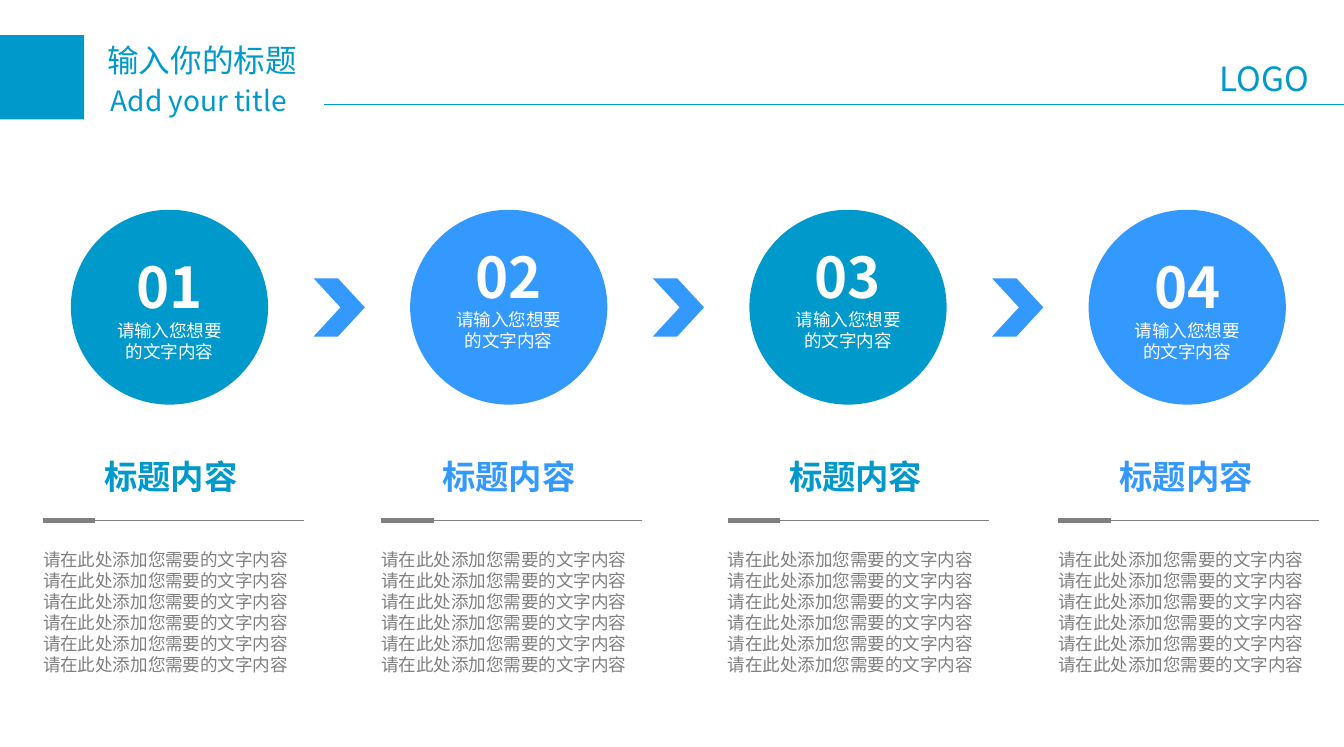
from dataclasses import dataclass

from lxml import etree
from pptx import Presentation
from pptx import util as u
from pptx.dml.color import RGBColor
from pptx.enum import shapes, text
from pptx.oxml import ns


@dataclass(frozen=True)
class Theme:
    teal: str = "0099CC"
    blue: str = "3399FF"
    grey: str = "808080"
    white: str = "FFFFFF"
    font: str = "Noto Sans CJK SC"
    body_font: str = "Arial"
    number: int = 32
    heading: int = 19
    title: int = 18
    subtitle: int = 16
    body: int = 10


class Deck:
    def __init__(self, theme, width, height):
        self.theme = theme
        self.prs = Presentation()
        self.prs.slide_width = u.Pt(width)
        self.prs.slide_height = u.Pt(height)
        self.s = self.prs.slides.add_slide(self.prs.slide_layouts[6])

    def shape(self, kind, x, y, w, h, color):
        sp = self.s.shapes.add_shape(kind, u.Pt(x), u.Pt(y), u.Pt(w), u.Pt(h))
        sp.shadow.inherit = False
        sp.fill.solid()
        sp.fill.fore_color.rgb = RGBColor.from_string(color)
        sp.line.fill.background()
        return sp

    def line(self, x1, x2, y, color, weight):
        ln = self.s.shapes.add_connector(
            shapes.MSO_CONNECTOR.STRAIGHT, u.Pt(x1), u.Pt(y), u.Pt(x2), u.Pt(y))
        ln.line.color.rgb = RGBColor.from_string(color)
        ln.line.width = u.Pt(weight)
        etree.SubElement(ln._element.spPr, ns.qn("a:effectLst"))

    def run(self, p, words, size, color, bold=False, font=None):
        r = p.add_run()
        r.text = words
        r.font.size = u.Pt(size)
        r.font.bold = bold
        r.font.name = font or self.theme.font
        r.font.color.rgb = RGBColor.from_string(color)
        ea = etree.SubElement(r._r.get_or_add_rPr(), ns.qn("a:ea"))
        ea.set("typeface", font or self.theme.font)

    def insets(self, tf, left, top, right, bottom):
        tf.margin_left, tf.margin_top = u.Pt(left), u.Pt(top)
        tf.margin_right, tf.margin_bottom = u.Pt(right), u.Pt(bottom)

    def label(self, x, y, w, h, lines, size, color, bold=False, font=None,
              align=text.PP_ALIGN.LEFT, wrap=True, inset=True):
        tf = self.s.shapes.add_textbox(u.Pt(x), u.Pt(y), u.Pt(w), u.Pt(h)).text_frame
        tf.word_wrap = wrap
        tf.auto_size = text.MSO_AUTO_SIZE.SHAPE_TO_FIT_TEXT
        if not inset:
            self.insets(tf, 0, 0, 0, 0)
        for i, words in enumerate(lines):
            p = tf.add_paragraph() if i else tf.paragraphs[0]
            p.alignment = align
            self.run(p, words, size, color, bold, font)

    def circle(self, x, y, w, h, color, number, caption, lift):
        t = self.theme
        sp = self.shape(shapes.MSO_SHAPE.OVAL, x, y, w, h, color)
        tf = sp.text_frame
        tf.word_wrap = True
        tf.vertical_anchor = text.MSO_ANCHOR.MIDDLE
        self.insets(tf, 6, 3, 6, 3 + lift)
        p = tf.paragraphs[0]
        p.alignment = text.PP_ALIGN.CENTER
        self.run(p, number, t.number, t.white, True)
        p = tf.add_paragraph()
        p.alignment = text.PP_ALIGN.CENTER
        self.run(p, caption, t.body, t.white)

    def chevron(self, x, y, w, h, color):
        sp = self.shape(shapes.MSO_SHAPE.CHEVRON, x, y, w, h, color)
        sp.adjustments[0] = 0.525


def header(deck):
    t = deck.theme
    deck.shape(shapes.MSO_SHAPE.RECTANGLE, 0, 20, 48, 48, t.teal)
    deck.label(54, 20, 124.5, 29, ["输入你的标题"], t.title, t.teal)
    deck.label(56, 44, 124.5, 26.6, ["Add your title"], t.subtitle, t.teal)
    deck.line(184.3, 765.4, 59.5, t.teal, 0.75)
    deck.label(687.6, 29.5, 69, 30, ["LOGO"], t.heading, t.teal, wrap=False)


def steps(deck):
    t = deck.theme
    pitch = 193.2
    sentence = "请在此处添加您需要的文字内容"
    column_lefts = (24.5, 217.1, 414.5, 602.8)
    lifts = (0, 12, 12, 0)
    for i, (left, lift) in enumerate(zip(column_lefts, lifts)):
        color = t.blue if i % 2 else t.teal
        deck.circle(40.4 + i * pitch, 119.5, 112.3, 111, color,
                    f"{i + 1:02d}", "请输入您想要的文字内容", lift)
        if i < 3:
            deck.chevron(178.6 + i * pitch, 158.5, 29.2, 33.2, t.blue)
        deck.label(left - 3.2, 256.3, 152, 30, ["标题内容"], t.heading, color,
                   bold=True, align=text.PP_ALIGN.CENTER)
        deck.line(left, left + 148.5, 296.5, t.grey, 0.5)
        deck.line(left, left + 29.8, 296.5, t.grey, 3)
        deck.label(left, 312.5, 148.5, 84, [sentence * 4, sentence, sentence],
                   t.body, t.grey, font=t.body_font, inset=False)


def main():
    deck = Deck(Theme(), 765.4, 425.5)
    header(deck)
    steps(deck)
    deck.prs.save("out.pptx")


if __name__ == "__main__":
    main()
